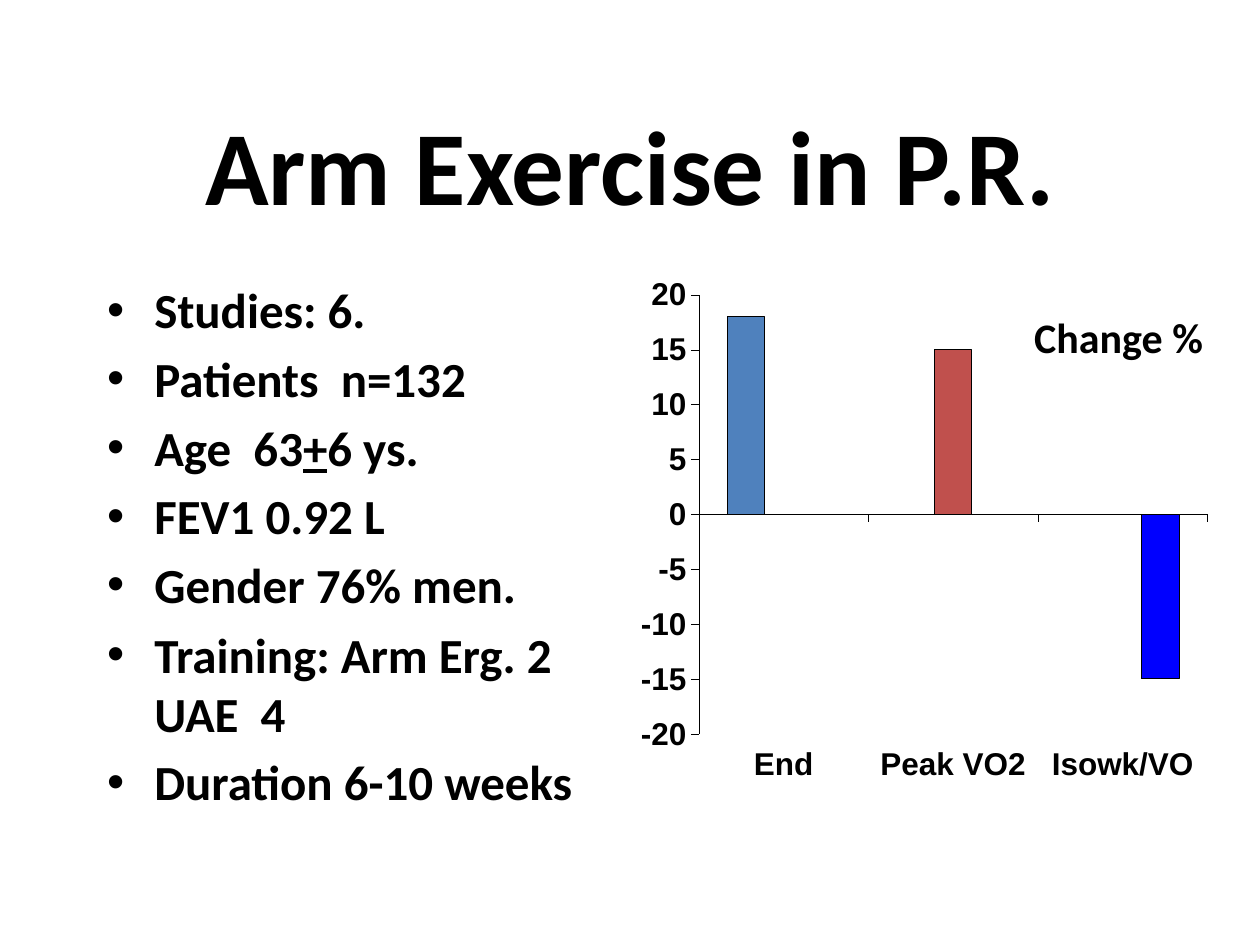
from lxml import etree
from pptx import Presentation
from pptx import util as u
from pptx.chart.data import CategoryChartData
from pptx.dml.color import RGBColor
from pptx.enum import chart as ch, text

BLACK = RGBColor(0x00, 0x00, 0x00)
BAR_COLOURS = [RGBColor(0x4F, 0x81, 0xBD), RGBColor(0xC0, 0x50, 0x4D), RGBColor(0x00, 0x00, 0xFF)]

deck = Presentation()
deck.slide_width, deck.slide_height = u.Inches(10), u.Inches(7.5)
slide = deck.slides.add_slide(deck.slide_layouts[1])

MARGIN = u.Inches(0.75)
CONTENT_TOP = u.Inches(2.17)
CHART_LEFT = deck.slide_width // 2


def place(shape, left, top, width, height):
    shape.left, shape.top, shape.width, shape.height = left, top, width, height


def style(font, size, name="Calibri"):
    font.name, font.size, font.bold = name, u.Pt(size), True
    font.color.rgb = BLACK


# Title
title = slide.shapes.title
place(title, MARGIN, u.Inches(0.67), deck.slide_width - 2 * MARGIN, u.Inches(1.25))
title.text_frame.auto_size = text.MSO_AUTO_SIZE.NONE
heading = title.text_frame.paragraphs[0].add_run()
heading.text = "Arm Exercise in P.R."
style(heading.font, 60)

# Study facts: one list of runs per bullet
facts = [
    ["Studies: 6."],
    ["Patients  n=132"],
    ["Age  63", "+", "6 ys."],
    ["FEV1 0.92 L"],
    ["Gender 76% men."],
    ["Training: Arm Erg. 2", "\n", "UAE  4"],
    ["Duration 6-10 weeks"],
]
body = slide.placeholders[1]
place(body, MARGIN, CONTENT_TOP, u.Inches(4.18), u.Inches(4.5))
body.text_frame.auto_size = text.MSO_AUTO_SIZE.NONE
for row, fact in enumerate(facts):
    bullet = body.text_frame.add_paragraph() if row else body.text_frame.paragraphs[0]
    for part in fact:
        if part == "\n":
            bullet.add_line_break()
            continue
        run = bullet.add_run()
        run.text = part
        style(run.font, 28)
        if part == "+":
            run.font.underline = True

# Change chart: each category has its own series, so its own colour
outcomes = ["End", "Peak VO2", "Isowk/VO"]
changes = [18, 15, -15]
data = CategoryChartData()
data.categories = outcomes
for i, change in enumerate(changes):
    data.add_series(f"Series {i + 1}", [change if j == i else None for j in range(len(outcomes))])
chart = slide.shapes.add_chart(ch.XL_CHART_TYPE.COLUMN_CLUSTERED, CHART_LEFT, CONTENT_TOP,
                               u.Inches(4.75), u.Inches(4.25), data).chart
chart.has_legend = chart.has_title = False
style(chart.font, 18, "Arial")

columns = chart.plots[0]
columns.gap_width, columns.overlap = 150, 0
columns.vary_by_categories = False
for series, colour in zip(columns.series, BAR_COLOURS):
    series.invert_if_negative = False
    series.format.fill.solid()
    series.format.fill.fore_color.rgb = colour
    series.format.line.color.rgb = BLACK
    series.format.line.width = u.Pt(0.6)

for axis in (chart.category_axis, chart.value_axis):
    axis.has_major_gridlines = False
    axis.major_tick_mark = ch.XL_TICK_MARK.OUTSIDE
    axis.minor_tick_mark = ch.XL_TICK_MARK.NONE
    axis.format.line.color.rgb = BLACK
    axis.format.line.width = u.Pt(0.15)
    style(axis.tick_labels.font, 18, "Arial")
chart.category_axis.tick_label_position = ch.XL_TICK_LABEL_POSITION.LOW
chart.value_axis.minimum_scale, chart.value_axis.maximum_scale = -20, 20
chart.value_axis.major_unit = 5

# Fixed inner plot area, as shares of the chart
C = "{http://schemas.openxmlformats.org/drawingml/2006/chart}"
plot_area = chart.element.find(f".//{C}plotArea")
for old in plot_area.findall(f"{C}layout"):
    plot_area.remove(old)
layout = etree.Element(f"{C}layout")
plot_area.insert(0, layout)
manual = etree.SubElement(layout, f"{C}manualLayout")
for tag, val in [("layoutTarget", "inner"), ("xMode", "edge"), ("yMode", "edge"),
                 ("x", 0.115), ("y", 0.04), ("w", 0.85), ("h", 0.82)]:
    etree.SubElement(manual, f"{C}{tag}", val=str(val))

# Unit label over the chart
unit = slide.shapes.add_textbox(u.Inches(8.11), u.Inches(2.42), u.Inches(1.78), u.Inches(0.51))
unit.text_frame.word_wrap = True
unit.text_frame.auto_size = text.MSO_AUTO_SIZE.SHAPE_TO_FIT_TEXT
label = unit.text_frame.paragraphs[0].add_run()
label.text = "Change %"
style(label.font, 24)

deck.save("out.pptx")
